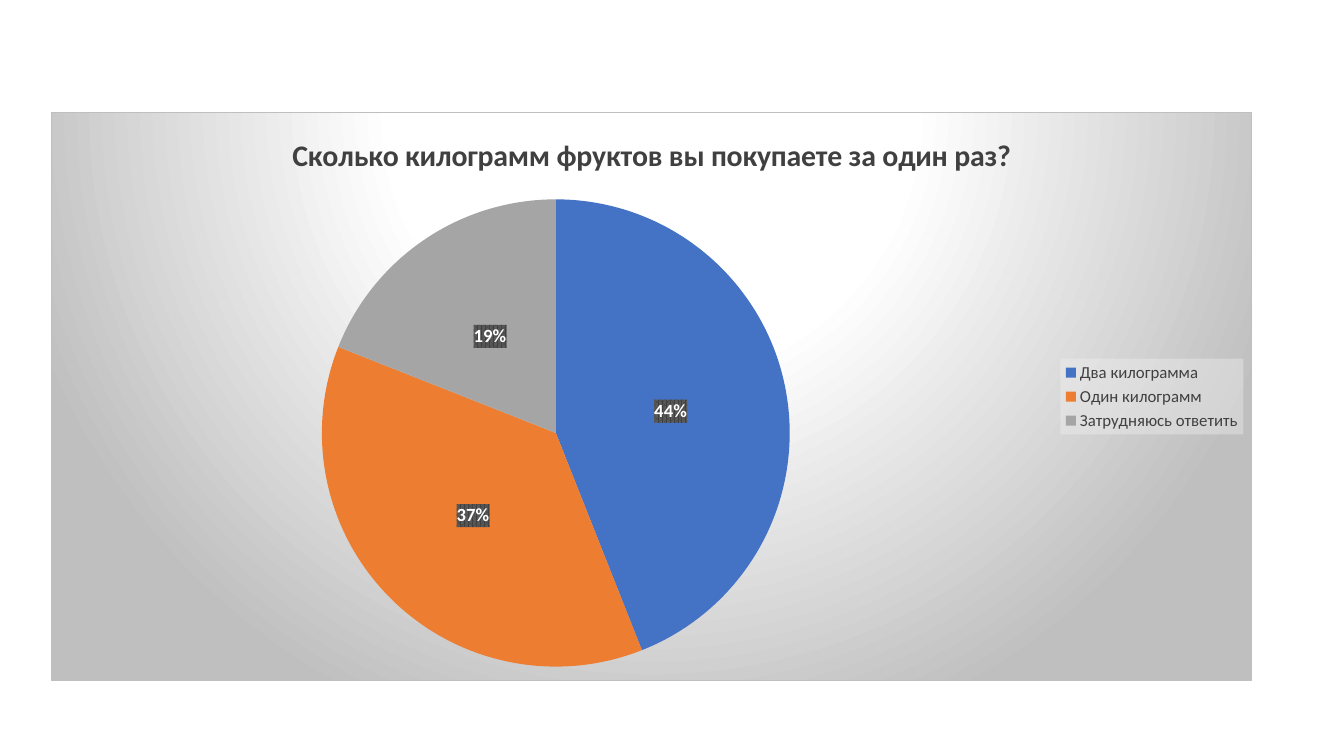
from pptx import Presentation
from pptx.chart.data import CategoryChartData
from pptx.dml.color import RGBColor
from pptx.enum.chart import XL_CHART_TYPE, XL_LABEL_POSITION, XL_LEGEND_POSITION
from pptx.oxml import parse_xml
from pptx.oxml.ns import nsdecls
from pptx.util import Inches, Pt

WHITE = RGBColor(0xFF, 0xFF, 0xFF)
BLACK = RGBColor(0x00, 0x00, 0x00)
DARK = RGBColor(0x40, 0x40, 0x40)
GRAPHITE = RGBColor(0x59, 0x59, 0x59)
SILVER = RGBColor(0xBF, 0xBF, 0xBF)
PALE = RGBColor(0xF2, 0xF2, 0xF2)
BLUE = RGBColor(0x44, 0x72, 0xC4)
ORANGE = RGBColor(0xED, 0x7D, 0x31)
GRAY = RGBColor(0xA5, 0xA5, 0xA5)

TITLE = "Сколько килограмм фруктов вы покупаете за один раз?"
ANSWERS = [
    ("Два килограмма", 44, BLUE),
    ("Один килограмм", 37, ORANGE),
    ("Затрудняюсь ответить", 19, GRAY),
]

BACKDROP = f"""
<a:gradFill>
  <a:gsLst>
    <a:gs pos="0"><a:srgbClr val="{WHITE}"/></a:gs>
    <a:gs pos="39000"><a:srgbClr val="{WHITE}"/></a:gs>
    <a:gs pos="100000"><a:srgbClr val="{SILVER}"/></a:gs>
  </a:gsLst>
  <a:path path="circle"><a:fillToRect l="50000" t="-80000" r="50000" b="180000"/></a:path>
</a:gradFill>
<a:ln w="{Pt(0.75)}"><a:solidFill><a:srgbClr val="{SILVER}"/></a:solidFill></a:ln>"""
LEGEND_FILL = f"""
<a:solidFill><a:srgbClr val="{PALE}"><a:alpha val="39000"/></a:srgbClr></a:solidFill>"""
LABEL_FILL = f"""
<a:pattFill prst="pct75">
  <a:fgClr><a:srgbClr val="{DARK}"/></a:fgClr>
  <a:bgClr><a:srgbClr val="{GRAPHITE}"/></a:bgClr>
</a:pattFill>"""
PIE_LAYOUT = {"x": 0.225, "y": 0.153, "w": 0.39, "h": 0.822}


def set_attributes(target, values):
    for name, value in values.items():
        setattr(target, name, value)


class SurveySlide:
    font_name = "Calibri"

    def __init__(self, presentation):
        self.slide = presentation.slides.add_slide(presentation.slide_layouts[6])

    def style_font(self, font, size, color, bold=False):
        set_attributes(font, {"name": self.font_name, "size": Pt(size), "bold": bold})
        font.color.rgb = color

    def add_pie(self, left, top, width, height, answers):
        data = CategoryChartData()
        data.categories = [name for name, _, _ in answers]
        data.add_series("Series 1", [value for _, value, _ in answers])
        frame = self.slide.shapes.add_chart(
            XL_CHART_TYPE.PIE, Inches(left), Inches(top), Inches(width), Inches(height), data
        )
        chart = frame.chart
        self.style_font(chart.font, 10, BLACK)
        self.fill_part(chart, "./c:txPr", BACKDROP)
        plot = chart.plots[0]
        plot.vary_by_categories = True
        for index, (_, _, color) in enumerate(answers):
            fill = plot.series[0].points[index].format.fill
            fill.solid()
            fill.fore_color.rgb = color
        return chart

    def fill_part(self, chart, text_path, fill_xml):
        """Put shape properties just before the text properties of a chart part."""
        text_properties = chart.element.xpath(text_path)[0]
        text_properties.addprevious(
            parse_xml(f"<c:spPr {nsdecls('c', 'a')}>{fill_xml}</c:spPr>")
        )

    def place_plot(self, chart, layout):
        """Fix the inner plot area at fractions of the chart size."""
        modes = '<c:xMode val="edge"/><c:yMode val="edge"/>'
        sizes = "".join(f'<c:{name} val="{value}"/>' for name, value in layout.items())
        plot_area = chart.element.xpath(".//c:plotArea")[0]
        for old_layout in plot_area.xpath("./c:layout"):
            plot_area.remove(old_layout)
        plot_area.insert(0, parse_xml(
            f"<c:layout {nsdecls('c')}><c:manualLayout>"
            f'<c:layoutTarget val="inner"/>{modes}{sizes}</c:manualLayout></c:layout>'
        ))

    def add_title(self, chart, text):
        chart.has_title = True
        chart.chart_title.include_in_layout = False
        paragraph = chart.chart_title.text_frame.paragraphs[0]
        run = paragraph.add_run()
        run.text = text
        self.style_font(run.font, 21.3, DARK, bold=True)

    def add_legend(self, chart):
        chart.has_legend = True
        set_attributes(chart.legend, {
            "position": XL_LEGEND_POSITION.RIGHT, "include_in_layout": False,
        })
        self.style_font(chart.legend.font, 12, DARK)
        self.fill_part(chart, ".//c:legend/c:txPr", LEGEND_FILL)

    def add_percent_labels(self, chart):
        labels = chart.plots[0].series[0].data_labels
        set_attributes(labels, {
            "show_percentage": True, "show_value": False,
            "number_format": "0%", "number_format_is_linked": False,
            "position": XL_LABEL_POSITION.CENTER,
        })
        self.style_font(labels.font, 13.3, WHITE, bold=True)
        self.fill_part(chart, ".//c:ser/c:dLbls/c:txPr", LABEL_FILL)


def main():
    presentation = Presentation()
    set_attributes(presentation, {"slide_width": Inches(13.33), "slide_height": Inches(7.5)})
    survey = SurveySlide(presentation)
    chart = survey.add_pie(0.51, 1.11, 11.91, 5.65, ANSWERS)
    survey.place_plot(chart, PIE_LAYOUT)
    survey.add_title(chart, TITLE)
    survey.add_legend(chart)
    survey.add_percent_labels(chart)
    presentation.save("out.pptx")


if __name__ == "__main__":
    main()
